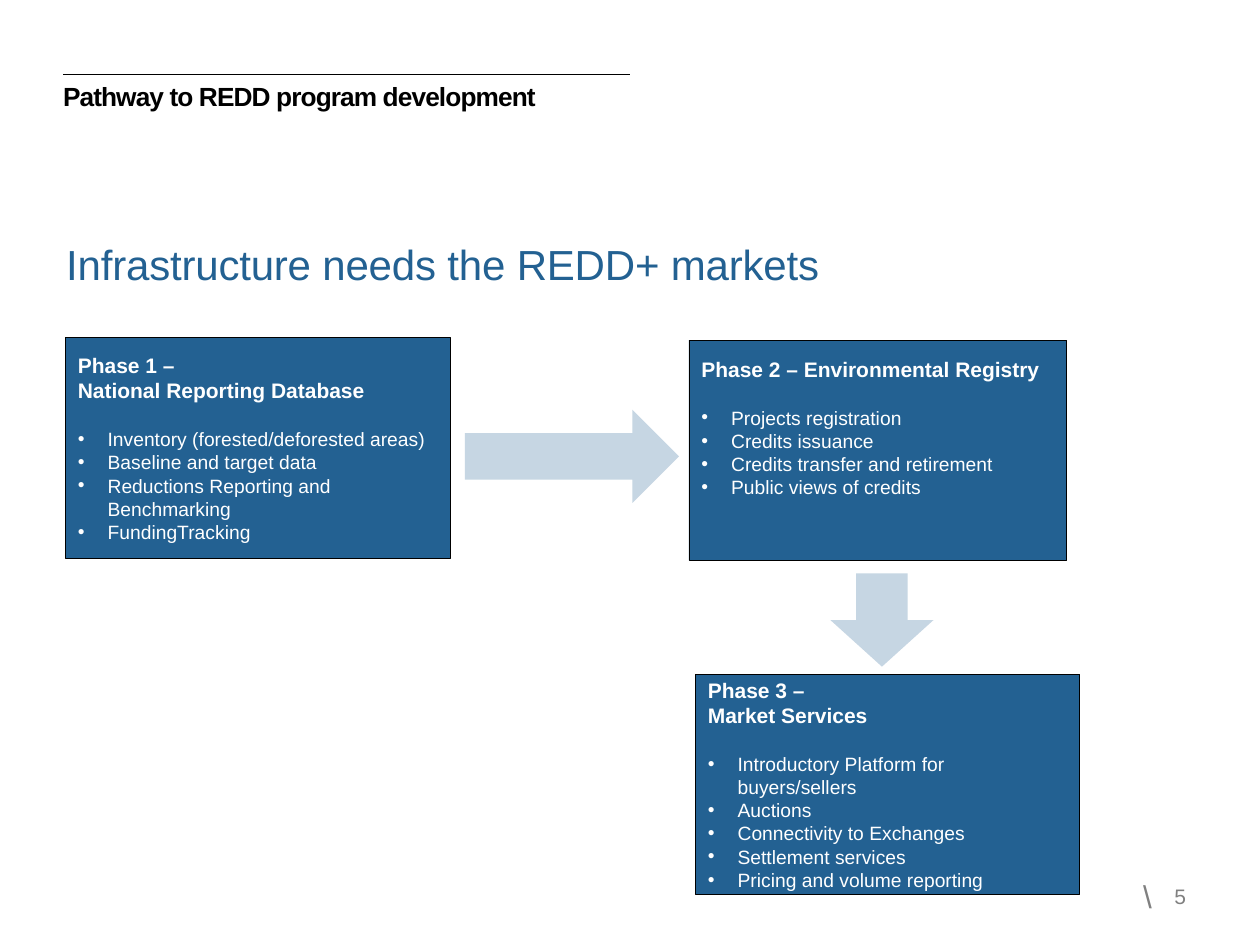
from lxml import etree
from pptx import Presentation, util as u
from pptx.dml.color import RGBColor
from pptx.enum import shapes, text
from pptx.oxml.ns import qn

BLUE = RGBColor(0x23, 0x61, 0x92)
PALE_BLUE = RGBColor(0xC6, 0xD6, 0xE3)
GREY = RGBColor(0x80, 0x80, 0x80)
BLACK = RGBColor(0, 0, 0)
WHITE = RGBColor(0xFF, 0xFF, 0xFF)


class SlideWriter:
    font_name = "Arial"
    bullet_indent = u.Cm(0.6)

    def __init__(self, slide):
        self.slide = slide

    def place(self, shape, left, top, width, height):
        shape.left, shape.top = u.Cm(left), u.Cm(top)
        shape.width, shape.height = u.Cm(width), u.Cm(height)

    def style(self, paragraph, size, color, bold=False, spacing=0,
              align=text.PP_ALIGN.LEFT):
        paragraph.alignment = align
        font = paragraph.font
        font.name, font.size, font.bold = self.font_name, u.Pt(size), bold
        font.color.rgb = color
        if spacing:
            paragraph._p.pPr.find(qn("a:defRPr")).set("spc", str(spacing))

    def bullet(self, paragraph, left, first_line, char=None):
        props = paragraph._p.get_or_add_pPr()
        props.set("marL", str(left))
        props.set("indent", str(first_line))
        if char:
            etree.SubElement(props, qn("a:buFont")).set("typeface", self.font_name)
            etree.SubElement(props, qn("a:buChar")).set("char", char)
        else:
            etree.SubElement(props, qn("a:buNone"))

    def title(self, words, *box):
        title = self.slide.shapes.title
        self.place(title, *box)
        frame = title.text_frame
        frame.text = words
        frame.vertical_anchor = text.MSO_ANCHOR.TOP
        frame.margin_left = frame.margin_right = frame.margin_bottom = 0
        self.style(frame.paragraphs[0], 15, BLACK, bold=True, spacing=-50)

    def subtitle(self, words, *box):
        body = self.slide.placeholders[1]
        self.place(body, *box)
        body.text_frame.text = words
        paragraph = body.text_frame.paragraphs[0]
        paragraph.space_before = u.Pt(0)
        paragraph.line_spacing = 0.9
        self.bullet(paragraph, u.Cm(0.64), u.Cm(-0.3))
        self.style(paragraph, 24, BLUE, spacing=-10)

    def rule(self, left, right, top):
        line = self.slide.shapes.add_connector(
            shapes.MSO_CONNECTOR.STRAIGHT,
            u.Cm(left), u.Cm(top), u.Cm(right), u.Cm(top))
        line.line.color.rgb = BLACK
        line.line.width = u.Pt(0.5)
        etree.SubElement(line._element.spPr, qn("a:effectLst"))

    def label(self, words, size, anchor, wrap, *box):
        frame = self.slide.shapes.add_textbox(*map(u.Cm, box)).text_frame
        frame.word_wrap = wrap
        frame.vertical_anchor = anchor
        frame.text = words
        self.style(frame.paragraphs[0], size, GREY, align=text.PP_ALIGN.RIGHT)

    def block(self, kind, fill, *box):
        block = self.slide.shapes.add_shape(kind, *map(u.Cm, box))
        block.shadow.inherit = False
        block.fill.solid()
        block.fill.fore_color.rgb = fill
        block.line.fill.background()
        return block

    def phase(self, heading, items, *box, top_margin=None):
        card = self.block(shapes.MSO_SHAPE.RECTANGLE, BLUE, *box)
        card.line.color.rgb = BLACK
        card.line.width = u.Pt(0.5)
        frame = card.text_frame
        frame.word_wrap = True
        frame.vertical_anchor = text.MSO_ANCHOR.MIDDLE
        if top_margin is not None:
            frame.vertical_anchor = text.MSO_ANCHOR.TOP
            frame.margin_top = u.Cm(top_margin)
        frame.text = "\n".join(heading + items)
        headings = frame.paragraphs[:len(heading)]
        for paragraph in headings:
            self.style(paragraph, 12, WHITE, bold=True)
        headings[-1].space_after = u.Pt(14)
        for paragraph in frame.paragraphs[len(heading):]:
            self.bullet(paragraph, self.bullet_indent, -self.bullet_indent, "•")
            self.style(paragraph, 11, WHITE)


def main():
    deck = Presentation()
    deck.slide_width, deck.slide_height = u.Cm(25.4), u.Cm(19.05)
    writer = SlideWriter(deck.slides.add_slide(deck.slide_layouts[1]))

    # Page number
    writer.label("\\", 18, text.MSO_ANCHOR.TOP, False, 22.73, 17.55, 0.74, 1.02)
    writer.label("5", 12, text.MSO_ANCHOR.MIDDLE, True, 22.99, 17.55, 1.17, 1.02)

    # Headings
    writer.rule(1.27, 12.7, 1.5)
    writer.title("Pathway to REDD program development", 1.27, 1.5, 11.43, 1.14)
    writer.subtitle("Infrastructure needs the REDD+ markets", 0.74, 4.8, 21.97, 1.09)

    # Phases
    writer.phase(
        ["Phase 1 –", "National Reporting Database"],
        ["Inventory (forested/deforested areas)", "Baseline and target data",
         "Reductions Reporting and Benchmarking", "FundingTracking"],
        1.32, 6.81, 7.77, 4.44)
    writer.phase(
        ["Phase 2 – Environmental Registry"],
        ["Projects registration", "Credits issuance",
         "Credits transfer and retirement", "Public views of credits"],
        13.89, 6.86, 7.62, 4.44, top_margin=0.32)
    writer.phase(
        ["Phase 3 –", "Market Services"],
        ["Introductory Platform for buyers/sellers", "Auctions",
         "Connectivity to Exchanges", "Settlement services",
         "Pricing and volume reporting"],
        14.02, 13.59, 7.75, 4.44)

    # Arrows between phases
    writer.block(shapes.MSO_SHAPE.RIGHT_ARROW, PALE_BLUE, 9.37, 8.26, 4.32, 1.88)
    writer.block(shapes.MSO_SHAPE.DOWN_ARROW, PALE_BLUE, 16.74, 11.56, 2.08, 1.88)

    deck.save("out.pptx")


if __name__ == "__main__":
    main()
